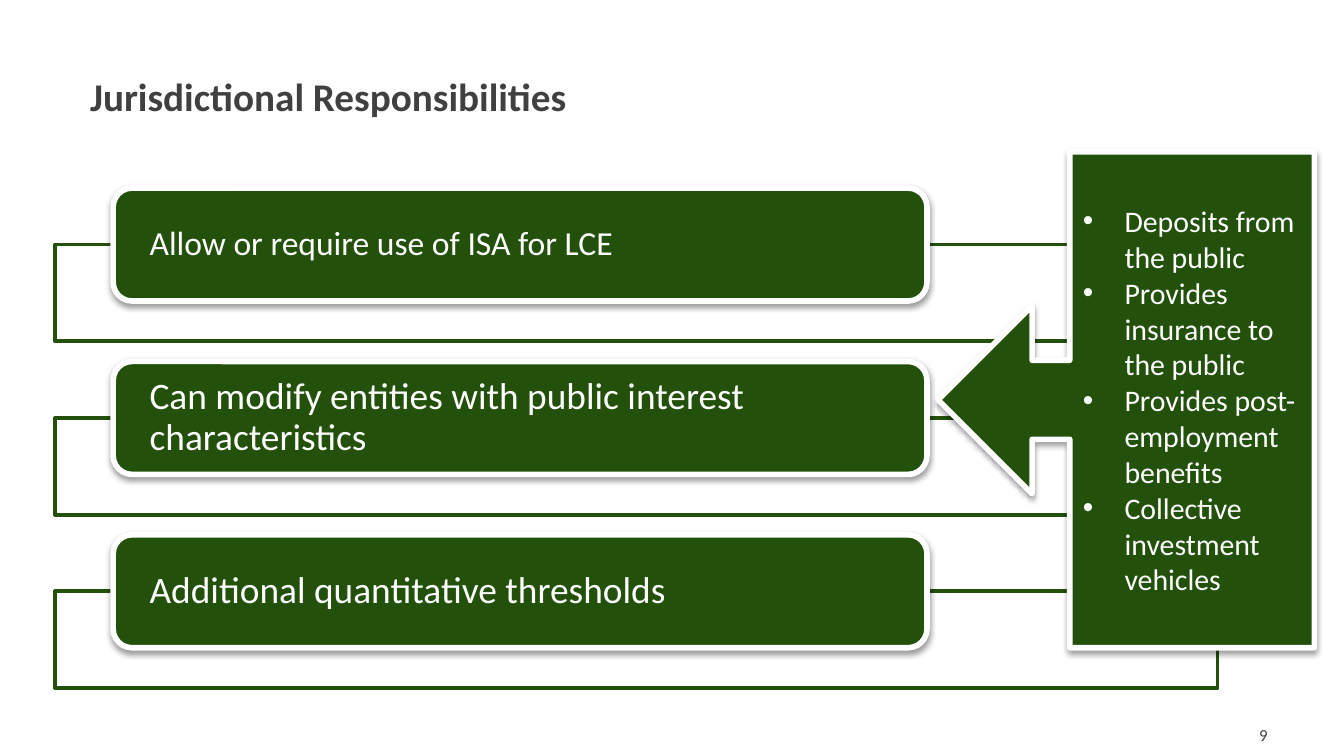
from dataclasses import dataclass

from lxml import etree
from pptx import Presentation
from pptx.dml.color import RGBColor
from pptx.enum.shapes import MSO_SHAPE
from pptx.enum.text import MSO_ANCHOR, PP_ALIGN
from pptx.oxml.ns import qn
from pptx.util import Inches, Pt

RECTANGLE = MSO_SHAPE.RECTANGLE
ROUNDED = MSO_SHAPE.ROUNDED_RECTANGLE
CALLOUT = MSO_SHAPE.LEFT_ARROW_CALLOUT
TOP, MIDDLE = MSO_ANCHOR.TOP, MSO_ANCHOR.MIDDLE
LEFT, RIGHT = PP_ALIGN.LEFT, PP_ALIGN.RIGHT


@dataclass(frozen=True)
class Theme:
    """Colours, font and type sizes of the deck."""
    green: RGBColor = RGBColor(0x23, 0x50, 0x0B)
    white: RGBColor = RGBColor(0xFF, 0xFF, 0xFF)
    gray: RGBColor = RGBColor(0x40, 0x40, 0x40)
    font: str = "Calibri"
    title: int = 21
    first_item: int = 18
    item: int = 20
    callout: int = 16
    number: int = 9


THEME = Theme()
RESPONSIBILITIES = [
    ("Allow or require use of ISA for LCE", THEME.first_item),
    ("Can modify entities with public interest characteristics", THEME.item),
    ("Additional quantitative thresholds", THEME.item),
]
CHARACTERISTICS = [
    "Deposits from the public",
    "Provides insurance to the public",
    "Provides post-employment benefits",
    "Collective investment vehicles",
]


def add_span(para, text, size, color, bold=False):
    """Add one formatted run to a paragraph."""
    span = para.add_run()
    span.text = text
    span.font.name = THEME.font
    span.font.size = Pt(size)
    span.font.bold = bold
    span.font.color.rgb = color


def add_shadow(shape):
    """Give a shape a soft shadow straight below it."""
    shape.shadow.inherit = False
    effects = shape._element.spPr.find(qn("a:effectLst"))
    shadow = etree.SubElement(effects, qn("a:outerShdw"), blurRad=str(Pt(3.1)),
                              dist=str(Pt(1.6)), dir="5400000", rotWithShape="0")
    color = etree.SubElement(shadow, qn("a:srgbClr"), val="000000")
    etree.SubElement(color, qn("a:alpha"), val="38000")


def add_panel(page, kind, left, top, width, height, fill, line, weight):
    """Add a filled and outlined shape without a shadow."""
    shape = page.shapes.add_shape(kind, Inches(left), Inches(top),
                                  Inches(width), Inches(height))
    shape.fill.solid()
    shape.fill.fore_color.rgb = fill
    shape.line.color.rgb = line
    shape.line.width = Pt(weight)
    shape.shadow.inherit = False
    shape.text_frame.word_wrap = True
    shape.text_frame.vertical_anchor = MIDDLE
    return shape


def add_bullet(para, indent):
    """Give a paragraph a hanging round bullet."""
    properties = para._p.get_or_add_pPr()
    properties.set("marL", str(Inches(indent)))
    properties.set("indent", str(-Inches(indent)))
    etree.SubElement(properties, qn("a:buFont"), typeface="Arial")
    etree.SubElement(properties, qn("a:buChar"), char="•")


def add_title(page, left, top, width, height):
    """Place and format the slide title."""
    title = page.shapes.title
    title.left, title.top = Inches(left), Inches(top)
    title.width, title.height = Inches(width), Inches(height)
    title.text_frame.vertical_anchor = TOP
    title.text_frame.word_wrap = True
    para = title.text_frame.paragraphs[0]
    para.alignment = LEFT
    para.line_spacing = 1.1
    add_span(para, "Jurisdictional Responsibilities", THEME.title, THEME.gray, True)


def add_page_number(page, left, top, width, height):
    """Place the page number."""
    box = page.shapes.add_textbox(Inches(left), Inches(top), Inches(width), Inches(height))
    box.text_frame.word_wrap = True
    box.text_frame.vertical_anchor = MIDDLE
    para = box.text_frame.paragraphs[0]
    para.alignment = RIGHT
    add_span(para, "9", THEME.number, THEME.gray)


def add_responsibility(page, left, top, width, text, size):
    """Add an outlined frame with a rounded label across its top edge."""
    frame = add_panel(page, RECTANGLE, left, top + 0.42, width, 0.72,
                      THEME.white, THEME.green, 2)
    color = frame._element.spPr.find(qn("a:solidFill"))[0]
    etree.SubElement(color, qn("a:alpha"), val="90000")
    label = add_panel(page, ROUNDED, left + width * 0.05, top, width * 0.7, 0.84,
                      THEME.green, THEME.white, 3)
    add_shadow(label)
    text_frame = label.text_frame
    text_frame.margin_left = text_frame.margin_right = Inches(0.23)
    text_frame.margin_top = text_frame.margin_bottom = 0
    para = text_frame.paragraphs[0]
    para.alignment = LEFT
    para.line_spacing = 0.9
    add_span(para, text, size, THEME.white)


def add_responsibilities(page, left, top, width, pitch):
    """Stack the responsibilities at an equal pitch."""
    for index, (text, size) in enumerate(RESPONSIBILITIES):
        add_responsibility(page, left, top + index * pitch, width, text, size)


def add_characteristics(page, left, top, width, height):
    """Add the arrow callout listing public interest characteristics."""
    callout = add_panel(page, CALLOUT, left, top, width, height,
                        THEME.green, THEME.white, 3)
    for index, value in enumerate((0.21, 0.25, 0.25, 0.65)):
        callout.adjustments[index] = value
    add_shadow(callout)
    text_frame = callout.text_frame
    for index, text in enumerate(CHARACTERISTICS):
        para = text_frame.add_paragraph() if index else text_frame.paragraphs[0]
        para.alignment = LEFT
        add_bullet(para, 0.31)
        add_span(para, text, THEME.callout, THEME.white)


def main():
    """Build and save the deck in the 16:9 format."""
    deck = Presentation()
    deck.slide_width = Inches(10)
    deck.slide_height = Inches(10 * 9 / 16)
    page = deck.slides.add_slide(deck.slide_layouts.get_by_name("Title Only"))
    add_page_number(page, 7.28, 5.32, 2.25, 0.3)
    add_title(page, 0.57, 0.45, 4, 0.53)
    add_responsibilities(page, 0.41, 1.4, 8.65, 1.29)
    add_characteristics(page, 6.98, 1.13, 2.8, 3.69)
    deck.save("out.pptx")


if __name__ == "__main__":
    main()
